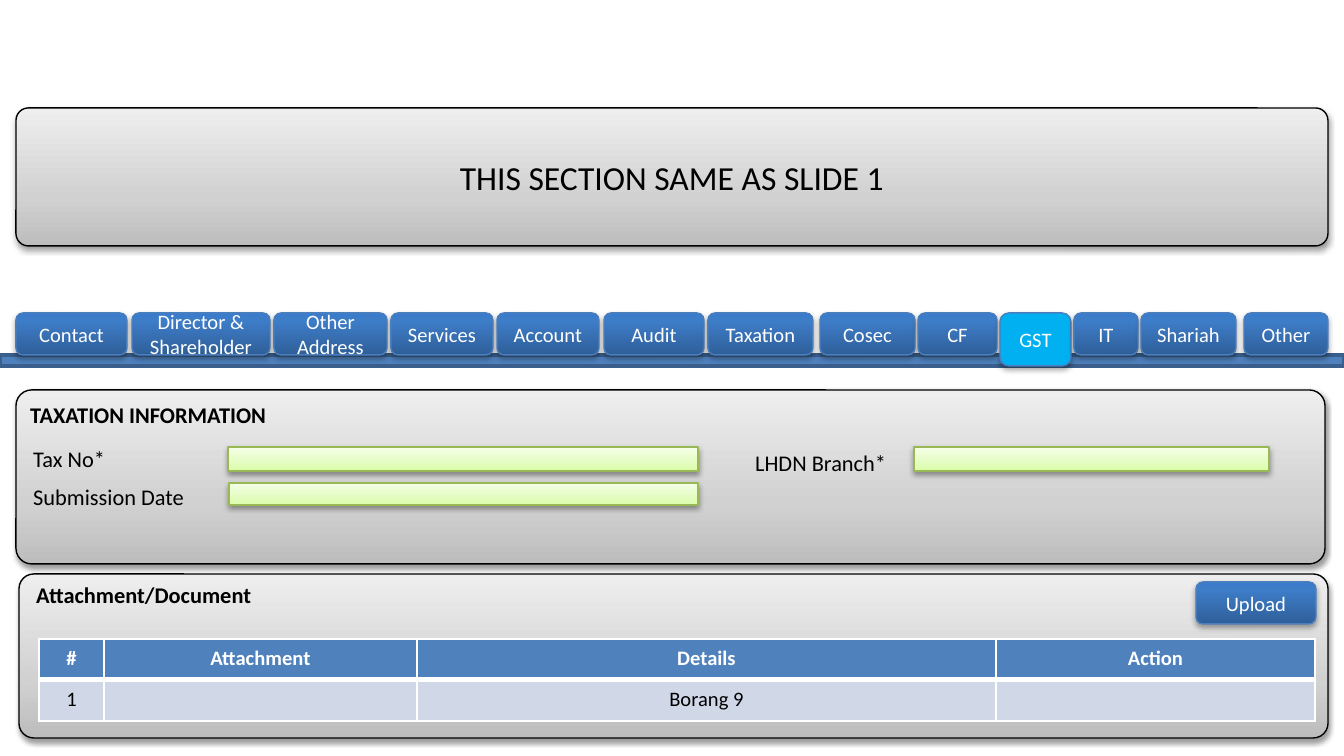
from lxml.etree import SubElement
from pptx import Presentation
from pptx.dml.color import RGBColor
from pptx.enum.shapes import MSO_SHAPE
from pptx.enum.text import MSO_ANCHOR, PP_ALIGN
from pptx.oxml.ns import qn
from pptx.util import Pt

# Content: places are (left, top, width, height) in px
COLORS = {
    "black": "000000", "white": "FFFFFF", "bar": "4F81BD", "bar line": "3A5F8C",
    "tab line": "4B7EBC", "active": "00B0F0", "field line": "98B955", "row": "D0D8E8",
}
GRADIENTS = {  # (position in percent, colour), from bottom to top
    "panel": [(0, "BDBDBD"), (35, "D1D1D1"), (100, "EEEEEE")],
    "tab": [(0, "2F5F99"), (80, "3D7CC7"), (100, "3A7CCB")],
    "field": [(0, "DAFDA7"), (35, "E4FCC2"), (100, "F5FFE7")],
}
SHADOWS = {"panel": (38, 1.6), "field": (38, 1.6), "tab": (35, 1.8), "active": (35, 1.8)}
BANNER = ("THIS SECTION SAME AS SLIDE 1", (16, 108, 1312, 138))
TAXATION_PANEL = (16, 390, 1309, 174)
ATTACHMENT_PANEL = (19, 574, 1309, 164)
BAR = (0, 355, 1344, 11)
TAB_TOP, TAB_HEIGHT, ACTIVE_HEIGHT = 313, 42, 53
ACTIVE_TAB = "GST"
TABS = [  # label, left, width
    ("Contact", 16, 111), ("Director & Shareholder", 132, 138),
    ("Other Address", 274, 113), ("Services", 391, 102), ("Account", 497, 102),
    ("Audit", 604, 100), ("Taxation", 708, 105), ("Cosec", 820, 95),
    ("CF", 918, 79), ("GST", 1000, 71), ("IT", 1074, 64),
    ("Shariah", 1141, 95), ("Other", 1244, 84),
]
UPLOAD = ("Upload", (1196, 582, 120, 42))
FIELDS = [(228, 447, 470, 24), (914, 447, 355, 24), (229, 483, 469, 22)]
LABELS = [  # text, place, bold
    ("TAXATION INFORMATION", (17, 395, 266, 40), True),
    ("Tax No*", (20, 439, 99, 40), False),
    ("LHDN Branch*", (742, 443, 160, 40), False),
    ("Submission Date", (20, 477, 180, 40), False),
    ("Attachment/Document", (23, 575, 245, 40), True),
]
TABLE_LEFT, TABLE_TOP, ROW_HEIGHT = 39, 639, 41
COLUMN_WIDTHS = [65, 313, 579, 319]
ROWS = [["#", "Attachment", "Details", "Action"], ["1", "", "Borang 9", ""]]

EMU_PER_PX = 914400 / 134.4


def px(value):
    return round(value * EMU_PER_PX)


def box(place):
    return [px(value) for value in place]


def rgb(name):
    return RGBColor.from_string(COLORS[name])


def write(frame, text, size=11, color="white", bold=False, align=PP_ALIGN.CENTER):
    paragraph = frame.paragraphs[0]
    paragraph.alignment = align
    if not text:  # keeps an empty cell from growing
        paragraph._p.get_or_add_endParaRPr().set("sz", str(size * 100))
        return
    run = paragraph.add_run()
    run.text = text
    run.font.name = "Calibri"
    run.font.size = Pt(size)
    run.font.bold = bold
    run.font.color.rgb = rgb(color)


def add_color(parent, value):
    return SubElement(parent, qn("a:srgbClr"), val=value)


def paint(shape, style):
    if style not in GRADIENTS:
        shape.fill.solid()
        shape.fill.fore_color.rgb = rgb(style)
        return
    shape.fill.gradient()
    shape.fill.gradient_angle = 90
    stops = shape._element.spPr.find(".//" + qn("a:gsLst"))
    for stop in list(stops):
        stops.remove(stop)
    for position, value in GRADIENTS[style]:
        add_color(SubElement(stops, qn("a:gs"), pos=str(position * 1000)), value)


def cast_shadow(shape, opacity, distance):
    effects = shape._element.spPr.find(qn("a:effectLst"))
    shadow = SubElement(effects, qn("a:outerShdw"), blurRad=str(Pt(3.1)),
                        dist=str(Pt(distance)), dir="5400000", rotWithShape="0")
    SubElement(add_color(shadow, COLORS["black"]), qn("a:alpha"), val=str(opacity * 1000))


def add_block(kind, place, style, line, weight=0.75, corner=None):
    shape = slide.shapes.add_shape(kind, *box(place))
    if corner:
        shape.adjustments[0] = corner
    paint(shape, style)
    shape.line.color.rgb = rgb(line)
    shape.line.width = Pt(weight)
    shape.shadow.inherit = False
    if style in SHADOWS:
        cast_shadow(shape, *SHADOWS[style])
    shape.text_frame.vertical_anchor = MSO_ANCHOR.MIDDLE
    return shape


def add_panel(place):
    return add_block(MSO_SHAPE.ROUNDED_RECTANGLE, place, "panel", "black", corner=0.09)


def add_button(text, place, style="tab"):
    button = add_block(MSO_SHAPE.ROUNDED_RECTANGLE, place, style, "tab line")
    button.text_frame.word_wrap = True
    write(button.text_frame, text)


def set_borders(cell, weights):
    properties = cell._tc.get_or_add_tcPr()
    for index, (side, weight) in enumerate(weights.items()):
        border = SubElement(properties, qn("a:ln" + side), w=str(Pt(weight)))
        add_color(SubElement(border, qn("a:solidFill")), COLORS["white"])
        properties.insert(index, border)


presentation = Presentation()
presentation.slide_width, presentation.slide_height = px(1344), px(756)
slide = presentation.slides.add_slide(presentation.slide_layouts[6])

# Panels and banner
add_panel(TAXATION_PANEL)
add_panel(ATTACHMENT_PANEL)
banner_text, banner_place = BANNER
write(add_panel(banner_place).text_frame, banner_text, size=18, color="black")

# Tab strip
add_block(MSO_SHAPE.FLOWCHART_PROCESS, BAR, "bar", "bar line", weight=2)
for label, left, width in TABS:
    active = label == ACTIVE_TAB
    height = ACTIVE_HEIGHT if active else TAB_HEIGHT
    add_button(label, (left, TAB_TOP, width, height), "active" if active else "tab")
add_button(*UPLOAD)

# Form fields and labels
for place in FIELDS:
    add_block(MSO_SHAPE.RECTANGLE, place, "field", "field line")
for label, place, bold in LABELS:
    caption = slide.shapes.add_textbox(*box(place))
    caption.text_frame.word_wrap = False
    write(caption.text_frame, label, size=12, color="black", bold=bold, align=PP_ALIGN.LEFT)

# Attachment table
table_place = (TABLE_LEFT, TABLE_TOP, sum(COLUMN_WIDTHS), ROW_HEIGHT * len(ROWS))
attachments = slide.shapes.add_table(len(ROWS), len(COLUMN_WIDTHS), *box(table_place)).table
for column, width in zip(attachments.columns, COLUMN_WIDTHS):
    column.width = px(width)
for row_index, row in enumerate(ROWS):
    header = row_index == 0
    for column_index, text in enumerate(row):
        cell = attachments.cell(row_index, column_index)
        cell.fill.solid()
        cell.fill.fore_color.rgb = rgb("bar" if header else "row")
        set_borders(cell, {"L": 1, "R": 1, "T": 1 if header else 3, "B": 3 if header else 1})
        write(cell.text_frame, text, color="white" if header else "black", bold=header)

presentation.save("out.pptx")
